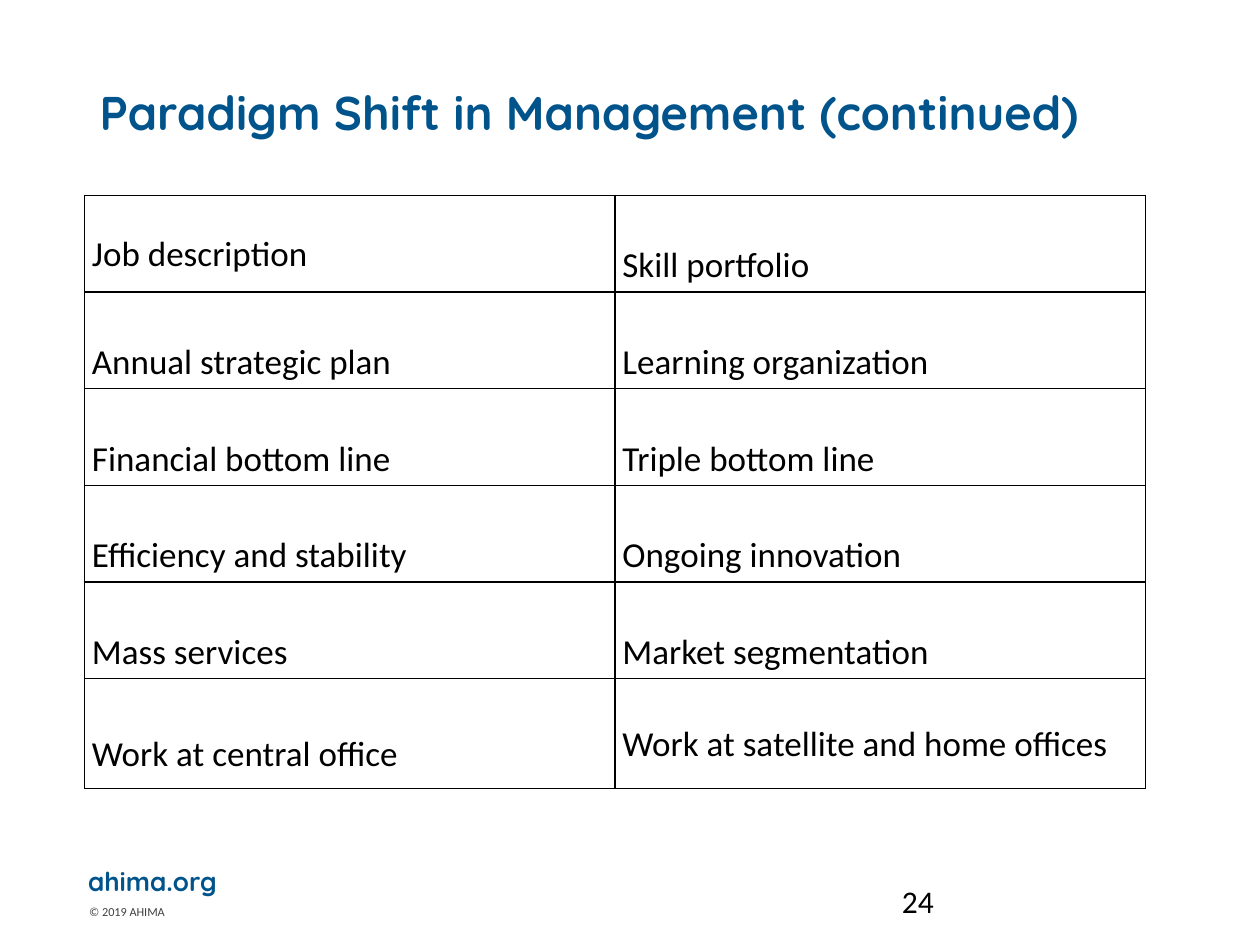
from lxml.etree import SubElement
from pptx import Presentation
from pptx.dml.color import RGBColor
from pptx.enum.text import MSO_ANCHOR, PP_ALIGN
from pptx.oxml.ns import qn
from pptx.util import Inches, Pt

BLUE = RGBColor(0x00, 0x54, 0x8B)
GRAY = RGBColor(0x40, 0x40, 0x40)
BLACK = RGBColor(0x00, 0x00, 0x00)
WHITE = RGBColor(0xFF, 0xFF, 0xFF)

ROWS = [
    ("Job description", "Skill portfolio"),
    ("Annual strategic plan", "Learning organization"),
    ("Financial bottom line", "Triple bottom line"),
    ("Efficiency and stability", "Ongoing innovation"),
    ("Mass services", "Market segmentation"),
    ("Work at central office", "Work at satellite and home offices"),
]
ROW_HEIGHTS = [0.58] * 5 + [0.87]
TIGHTER_CELLS = {(0, 0), (5, 1)}


def add_run(paragraph, text, font_name, size, color, bold=False):
    run = paragraph.add_run()
    run.text = text
    run.font.name = font_name
    run.font.size = Pt(size)
    run.font.color.rgb = color
    run.font.bold = bold


def add_borders(cell):
    """Draw a thin black line on all four sides of a table cell."""
    properties = cell._tc.get_or_add_tcPr()
    for index, side in enumerate(("a:lnL", "a:lnR", "a:lnT", "a:lnB")):
        line = SubElement(properties, qn(side), w=str(Pt(1)))
        fill = SubElement(line, qn("a:solidFill"))
        SubElement(fill, qn("a:srgbClr"), val=str(BLACK))
        properties.insert(index, line)


presentation = Presentation()
presentation.slide_width = Inches(10)
presentation.slide_height = Inches(7.5)
slide = presentation.slides.add_slide(presentation.slide_layouts[5])

# Title, raised by a deep bottom margin
title = slide.shapes.title
title.left, title.top = Inches(0.69), Inches(0.4)
title.width, title.height = Inches(8.62), Inches(1.45)
title_frame = title.text_frame
title_frame.vertical_anchor = MSO_ANCHOR.MIDDLE
title_frame.margin_bottom = Inches(0.47)
paragraph = title_frame.paragraphs[0]
paragraph.alignment = PP_ALIGN.LEFT
paragraph.line_spacing = 0.9
add_run(paragraph, "Paradigm Shift in Management\u00a0(continued)", "Quicksand", 27, BLUE, True)

# Footer texts and page number
for text, left, top, width, height, font_name, size, color, bold in [
    ("© 2019 AHIMA", 0.61, 7.13, 5.12, 0.22, "Calibri", 7, GRAY, False),
    ("ahima.org", 0.6, 6.82, 1.85, 0.35, "Quicksand", 15, BLUE, True),
    ("24", 7.06, 6.95, 2.25, 0.4, "Calibri", 18, BLACK, False),
]:
    box = slide.shapes.add_textbox(Inches(left), Inches(top), Inches(width), Inches(height))
    box.text_frame.word_wrap = True
    add_run(box.text_frame.paragraphs[0], text, font_name, size, color, bold)

# Comparison table
table = slide.shapes.add_table(
    len(ROWS), 2, Inches(0.67), Inches(1.55), Inches(8.42), Inches(sum(ROW_HEIGHTS))
).table
table.first_row = False
table.horz_banding = False
for row_index, (texts, height) in enumerate(zip(ROWS, ROW_HEIGHTS)):
    table.rows[row_index].height = Inches(height)
    for column_index, text in enumerate(texts):
        cell = table.cell(row_index, column_index)
        cell.fill.solid()
        cell.fill.fore_color.rgb = WHITE
        cell.vertical_anchor = MSO_ANCHOR.MIDDLE
        cell.margin_left = cell.margin_right = Inches(0.06)
        cell.margin_top = cell.margin_bottom = Inches(0.05)
        add_borders(cell)
        paragraph = cell.text_frame.paragraphs[0]
        if (row_index, column_index) in TIGHTER_CELLS:
            paragraph.line_spacing = 1.5
        else:
            paragraph.line_spacing = 2.0
            paragraph.space_after = Pt(5)
        add_run(paragraph, text, "Calibri", 20, BLACK)

presentation.save("out.pptx")
